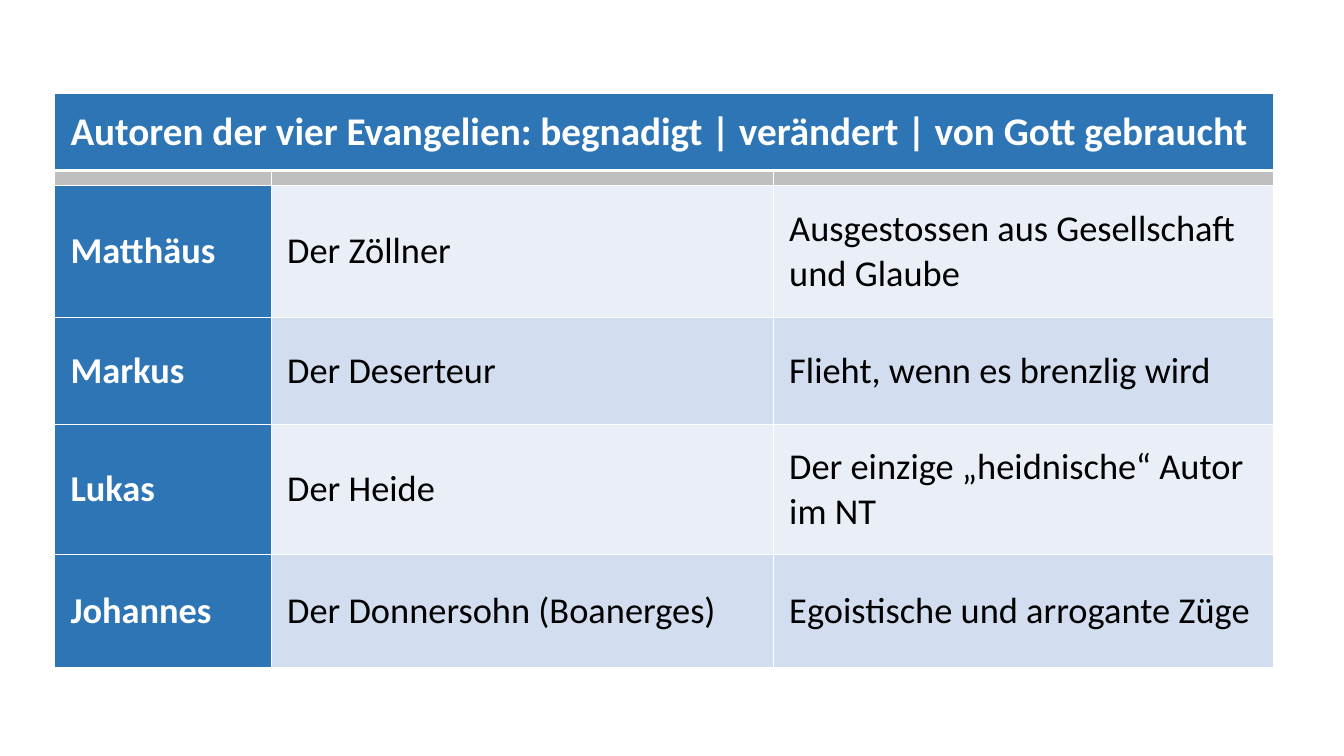
import pptx
import pptx.dml.color
import pptx.enum.text
import pptx.oxml
import pptx.oxml.ns
import pptx.util

Pt = pptx.util.Pt
ALIGN = pptx.enum.text.PP_ALIGN
BLUE, GREY, WHITE, BLACK = "2E75B6", "BFBFBF", "FFFFFF", "000000"
BANDS = ["EAEFF7", "D2DEEF"]
COLS = [154.8, 358.6, 357.8]
ROWS = [54.7, 10.8, 94.3, 76.3, 92.9, 80.6]
HEADING = "Autoren der vier Evangelien: begnadigt | verändert | von Gott gebraucht"
AUTHORS = [
    ("Matthäus", "Der Zöllner", "Ausgestossen aus Gesellschaft\nund Glaube"),
    ("Markus", "Der Deserteur", "Flieht, wenn es brenzlig wird"),
    ("Lukas", "Der Heide", "Der einzige „heidnische“ Autor\nim NT"),
    ("Johannes", "Der Donnersohn (Boanerges)", "Egoistische und arrogante Züge"),
]


def rgb(value):
    return pptx.dml.color.RGBColor.from_string(value)


class Deck:
    font = "Calibri"

    def __init__(self, prs):
        self.s = prs.slides.add_slide(prs.slide_layouts[6])

    def table(self, left, top, cols, rows):
        sp = self.s.shapes.add_table(
            len(rows), len(cols), Pt(left), Pt(top), Pt(sum(cols)), Pt(sum(rows)))
        table = sp.table
        for column, width in zip(table.columns, cols):
            column.width = Pt(width)
        for row, height in zip(table.rows, rows):
            row.height = Pt(height)
        return table

    def cell(self, cell, fill, top=1, bottom=1):
        cell.fill.solid()
        cell.fill.fore_color.rgb = rgb(fill)
        cell.vertical_anchor = pptx.enum.text.MSO_ANCHOR.MIDDLE
        cell.margin_left = cell.margin_right = Pt(11.5)
        cell.margin_top = cell.margin_bottom = 0
        sides = [("L", 1), ("R", 1), ("T", top), ("B", bottom)]
        for i, (side, width) in enumerate(sides):
            cell._tc.tcPr.insert(i, pptx.oxml.parse_xml(
                f'<a:ln{side} {pptx.oxml.ns.nsdecls("a")} w="{Pt(width)}">'
                f'<a:solidFill><a:srgbClr val="{WHITE}"/></a:solidFill></a:ln{side}>'))

    def text(self, cell, text, size, color, bold, align=ALIGN.LEFT):
        tf = cell.text_frame
        for i, line in enumerate(text.split("\n")):
            p = tf.add_paragraph() if i else tf.paragraphs[0]
            p.alignment = align
            r = p.add_run()
            r.text = line
            r.font.name = self.font
            r.font.size = Pt(size)
            r.font.bold = bold
            r.font.color.rgb = rgb(color)

    def spacer(self, cell):
        self.cell(cell, GREY, top=3)
        cell.text_frame.paragraphs[0]._p.append(pptx.oxml.parse_xml(
            f'<a:endParaRPr {pptx.oxml.ns.nsdecls("a")} sz="200"/>'))


def main():
    prs = pptx.Presentation()
    prs.slide_width, prs.slide_height = Pt(960), Pt(540)
    deck = Deck(prs)
    table = deck.table(38.9, 67, COLS, ROWS)

    for c in range(len(COLS)):
        deck.cell(table.cell(0, c), BLUE, bottom=3)
        deck.spacer(table.cell(1, c))
    heading = table.cell(0, 0)
    heading.merge(table.cell(0, len(COLS) - 1))
    deck.text(heading, HEADING, 28, WHITE, True, ALIGN.JUSTIFY)

    for i, author in enumerate(AUTHORS):
        for c, text in enumerate(author):
            cell = table.cell(i + 2, c)
            is_name = c == 0
            deck.cell(cell, BLUE if is_name else BANDS[i % 2])
            deck.text(cell, text, 26, WHITE if is_name else BLACK, is_name)

    prs.save("out.pptx")


if __name__ == "__main__":
    main()
